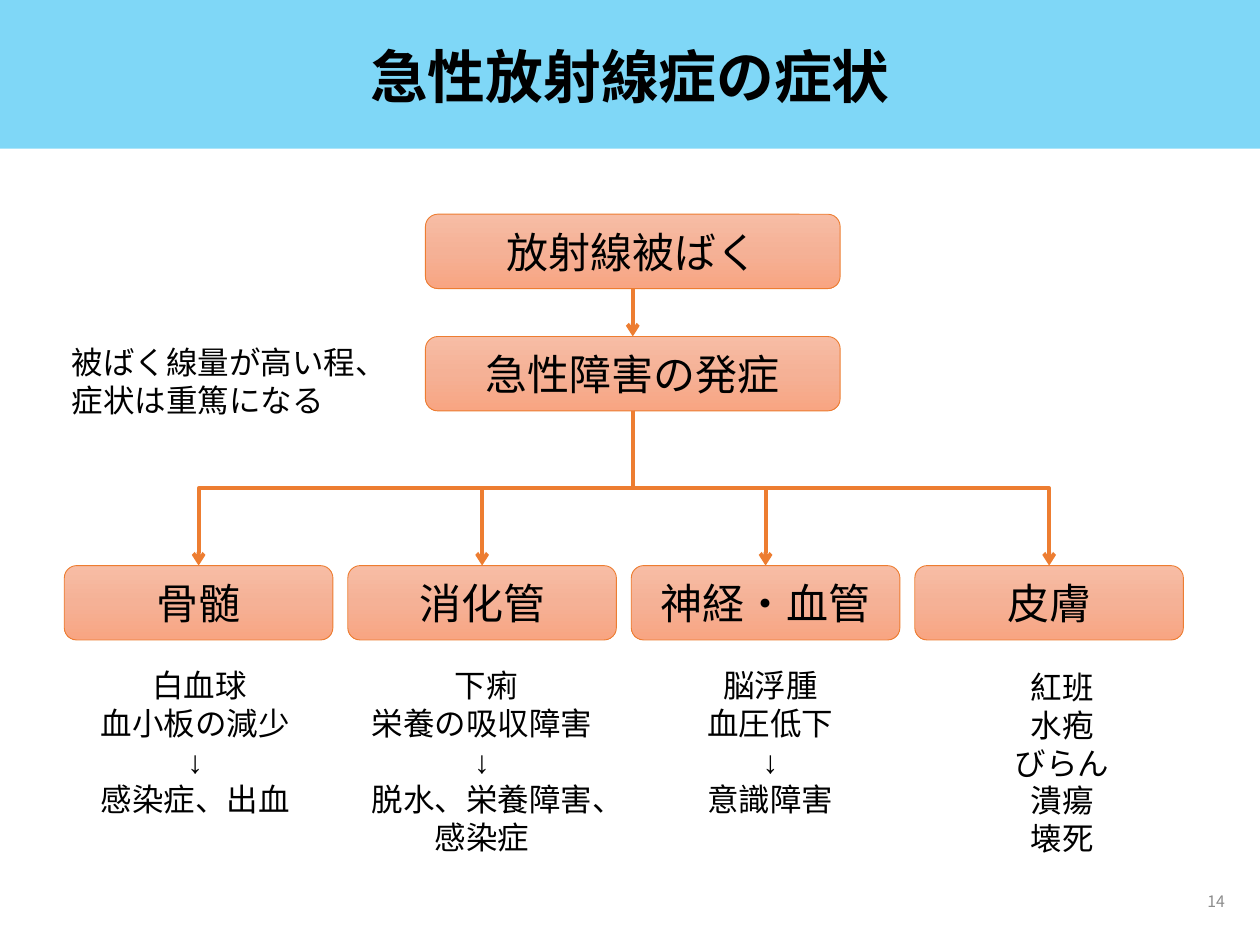
from copy import deepcopy

from lxml import etree
from pptx import Presentation
from pptx.dml.color import RGBColor
from pptx.enum import shapes, text
from pptx.oxml.ns import qn
from pptx.util import Pt

BLACK = RGBColor(0x00, 0x00, 0x00)
GRAY = RGBColor(0x8C, 0x8C, 0x8C)
SKY = RGBColor(0x00, 0xB0, 0xF0)
ORANGE = RGBColor(0xED, 0x7D, 0x31)
PEACH_STOPS = [
    (0, RGBColor(0xF7, 0xBD, 0xA5)),
    (0.5, RGBColor(0xF5, 0xB1, 0x96)),
    (1, RGBColor(0xF8, 0xA5, 0x82)),
]
LATIN, JAPANESE = "Arial", "Noto Sans CJK JP"
LEFT, CENTER, RIGHT = (text.PP_ALIGN.LEFT, text.PP_ALIGN.CENTER,
                       text.PP_ALIGN.RIGHT)


def write_text(frame, content, size=18, font=LATIN, color=BLACK, bold=False,
               align=CENTER, anchor=text.MSO_ANCHOR.TOP, spacing=None):
    """Fill a text frame, one paragraph for each line of content."""
    frame.word_wrap = True
    frame.vertical_anchor = anchor
    for number, line in enumerate(content.split("\n")):
        paragraph = frame.add_paragraph() if number else frame.paragraphs[0]
        paragraph.alignment = align
        if spacing:
            paragraph.line_spacing = spacing
        run = paragraph.add_run()
        run.text = line
        run.font.size, run.font.bold = Pt(size), bold
        run.font.color.rgb = color
        run.font.name = font
        etree.SubElement(run._r.get_or_add_rPr(), qn("a:ea"), typeface=font)


class Diagram:
    """Style and current slide of the symptom chart."""

    line_width = 2.25
    border_width = 0.5
    box_height = 42.5

    def __init__(self, slide):
        self.slide = slide

    def banner(self, width, height):
        band = self.slide.shapes.add_shape(
            shapes.MSO_SHAPE.RECTANGLE, 0, 0, Pt(width), Pt(height))
        band.shadow.inherit = False
        band.fill.solid()
        band.fill.fore_color.rgb = SKY
        band.line.fill.background()
        shade = band.element.spPr.find(".//" + qn("a:srgbClr"))
        etree.SubElement(shade, qn("a:alpha"), val="50000")
        band.element.getparent().insert(2, band.element)  # behind the title

    def title(self, content, left, top, width, height):
        heading = self.slide.shapes.title
        heading.left, heading.top = Pt(left), Pt(top)
        heading.width, heading.height = Pt(width), Pt(height)
        write_text(heading.text_frame, content, size=33, font=JAPANESE,
                   bold=True, anchor=text.MSO_ANCHOR.MIDDLE, spacing=0.9)

    def box(self, content, center, top, width):
        node = self.slide.shapes.add_shape(
            shapes.MSO_SHAPE.ROUNDED_RECTANGLE, Pt(center - width / 2),
            Pt(top), Pt(width), Pt(self.box_height))
        node.shadow.inherit = False
        node.fill.gradient()
        node.fill.gradient_angle = 270
        first = node.element.spPr.find(".//" + qn("a:gs"))
        first.addnext(deepcopy(first))
        for stop, (position, color) in zip(node.fill.gradient_stops,
                                           PEACH_STOPS):
            stop.position = position
            stop.color.rgb = color
        node.line.color.rgb = ORANGE
        node.line.width = Pt(self.border_width)
        write_text(node.text_frame, content, size=24,
                   anchor=text.MSO_ANCHOR.MIDDLE)

    def label(self, content, left, top, width, height, **style):
        note = self.slide.shapes.add_textbox(
            Pt(left), Pt(top), Pt(width), Pt(height))
        write_text(note.text_frame, content, **style)

    def arrow(self, kind, start, end):
        link = self.slide.shapes.add_connector(
            kind, *(Pt(value) for value in (*start, *end)))
        link.line.color.rgb = ORANGE
        link.line.width = Pt(self.line_width)
        etree.SubElement(link.line._get_or_add_ln(), qn("a:tailEnd"),
                         type="arrow")
        etree.SubElement(link.element.spPr, qn("a:effectLst"))
        return link

    def branch(self, start, end):
        """Elbow that leaves downwards: a sideways elbow, turned."""
        (x1, y1), (x2, y2) = start, end
        mid_x, mid_y = (x1 + x2) / 2, (y1 + y2) / 2
        half_run, half_rise = (y2 - y1) / 2, abs(x2 - x1) / 2
        to_right = x2 > x1
        if to_right:
            half_run = -half_run  # begins at the right, so it is flipped
        link = self.arrow(shapes.MSO_CONNECTOR.ELBOW,
                          (mid_x - half_run, mid_y - half_rise),
                          (mid_x + half_run, mid_y + half_rise))
        turn = 270 if to_right else 90
        link.element.spPr.find(qn("a:xfrm")).set("rot", str(turn * 60000))


def main():
    deck = Presentation()
    deck.slide_width, deck.slide_height = Pt(720), Pt(540)
    diagram = Diagram(deck.slides.add_slide(deck.slide_layouts[5]))

    # Heading and page number
    diagram.banner(720, 85)
    diagram.title("急性放射線症の症状", 49.7, 15.1, 620.6, 61.2)
    diagram.label("14", 545, 500.4, 162, 28.8, size=9, font=JAPANESE,
                  color=GRAY, align=RIGHT, anchor=text.MSO_ANCHOR.MIDDLE)

    # Cause and onset
    trunk, cause_top, onset_top, organ_top = 361.6, 122.4, 192.3, 323.2
    diagram.box("放射線被ばく", trunk, cause_top, 237)
    diagram.box("急性障害の発症", trunk, onset_top, 237)
    diagram.arrow(shapes.MSO_CONNECTOR.STRAIGHT,
                  (trunk, cause_top + diagram.box_height),
                  (trunk, onset_top))
    diagram.label("被ばく線量が高い程、症状は重篤になる", 33.8, 192.3, 181.4, 51,
                  font=JAPANESE, align=LEFT)

    # Organs with their symptoms: left, top, width, height of each list
    organs = [
        ("骨髄", " 白血球\n血小板の減少\n↓\n感染症、出血",
         (42.5, 377.3, 138.2, 94.3)),
        ("消化管", " 下痢\n栄養の吸収障害\n↓\n脱水、栄養障害、感染症",
         (198.7, 377.3, 153.5, 116.6)),
        ("神経・血管", "脳浮腫\n血圧低下\n↓\n意識障害",
         (360, 377.3, 160.6, 94.3)),
        ("皮膚", "紅班\n水疱\nびらん\n潰瘍\n壊死",
         (526.3, 378.2, 161.3, 116.6)),
    ]
    for column, (organ, symptoms, place) in enumerate(organs):
        center = 113.5 + 162 * column
        diagram.box(organ, center, organ_top, 153.5)
        diagram.branch((trunk, onset_top + diagram.box_height),
                       (center, organ_top))
        diagram.label(symptoms, *place)

    deck.save("out.pptx")


if __name__ == "__main__":
    main()
